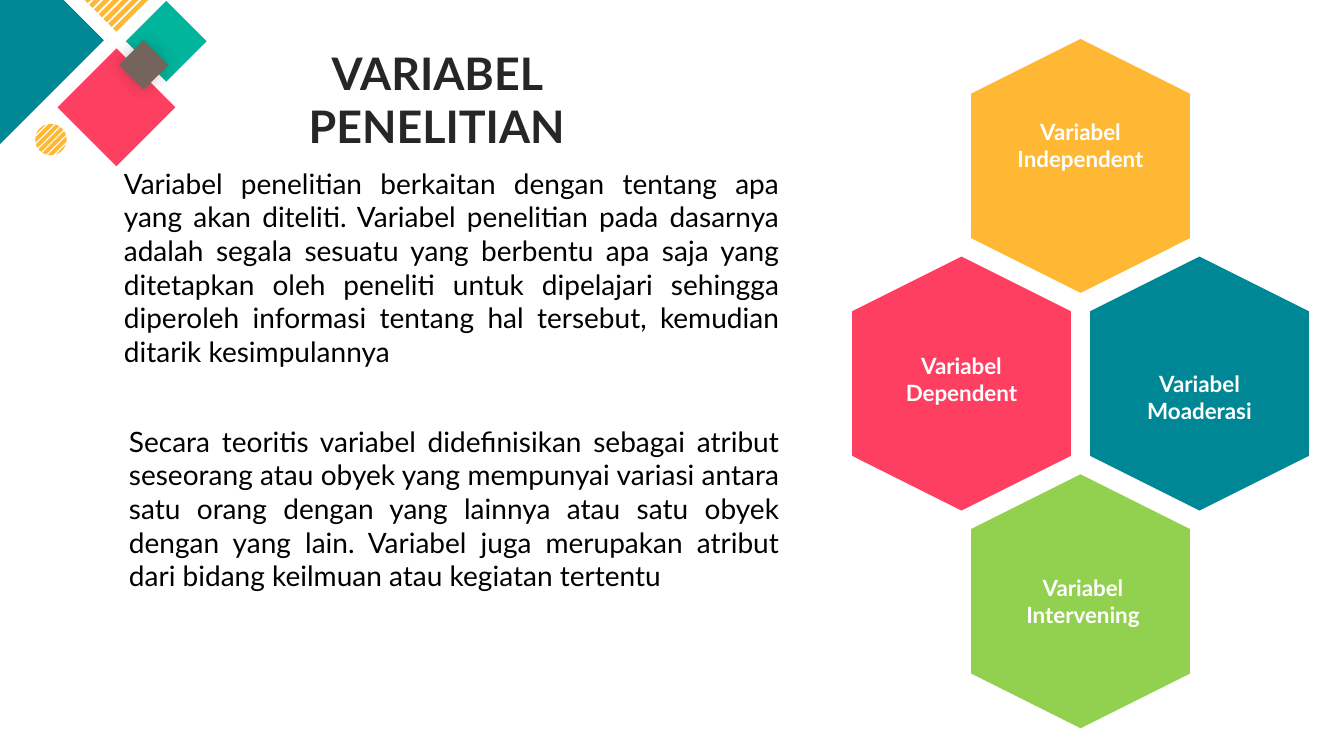
import math

import lxml.etree
import pptx
import pptx.dml.color
import pptx.enum.shapes
import pptx.enum.text
import pptx.oxml.ns
import pptx.util

Pt = pptx.util.Pt
SHAPE = pptx.enum.shapes.MSO_SHAPE
ALIGN = pptx.enum.text.PP_ALIGN
ANCHOR = pptx.enum.text.MSO_ANCHOR

FONT = "Lato"
TEAL, PINK, YELLOW = "008795", "FE3F61", "FEB834"
MINT, BROWN, GREEN = "01B59C", "75645C", "92D050"
BLACK, CHARCOAL, WHITE = "000000", "262626", "FFFFFF"

TITLE = "VARIABEL PENELITIAN"
DEFINITION = (
    "Variabel penelitian berkaitan dengan tentang apa yang akan diteliti. "
    "Variabel penelitian pada dasarnya adalah segala sesuatu yang berbentu apa saja "
    "yang ditetapkan oleh peneliti untuk dipelajari sehingga diperoleh informasi "
    "tentang hal tersebut, kemudian ditarik kesimpulannya"
)
THEORY = (
    "Secara teoritis variabel didefinisikan sebagai atribut seseorang atau obyek "
    "yang mempunyai variasi antara satu orang dengan yang lainnya atau satu obyek "
    "dengan yang lain. Variabel juga merupakan atribut dari bidang keilmuan atau "
    "kegiatan tertentu"
)
# Column and row from the cluster centre, fill, text, label shift right and down
HEXAGONS = [
    (0, -1, YELLOW, "Variabel Independent", 0, -14.8),
    (-1, 0, PINK, "Variabel Dependent", 0, -3.2),
    (1, 0, TEAL, "Variabel Moaderasi", 0, 9.7),
    (0, 1, GREEN, "Variabel Intervening", 1.8, 0),
]


def colour(hex_string):
    return pptx.dml.color.RGBColor.from_string(hex_string)


def paint(shape, fill):
    shape.shadow.inherit = False
    shape.fill.solid()
    shape.fill.fore_color.rgb = colour(fill)
    shape.line.fill.background()


def add_centred(page, kind, x, y, width, height, fill, rotation=0):
    shape = page.shapes.add_shape(
        kind, Pt(x - width / 2), Pt(y - height / 2), Pt(width), Pt(height))
    shape.rotation = rotation
    paint(shape, fill)
    return shape


def add_glow(shape, blur, opacity):
    effects = shape._element.spPr.find(pptx.oxml.ns.qn("a:effectLst"))
    shadow = lxml.etree.SubElement(
        effects, pptx.oxml.ns.qn("a:outerShdw"), blurRad=str(Pt(blur)), dist="0", dir="0")
    black = lxml.etree.SubElement(shadow, pptx.oxml.ns.qn("a:srgbClr"), val=BLACK)
    lxml.etree.SubElement(black, pptx.oxml.ns.qn("a:alpha"), val=str(opacity * 1000))


def write(frame, text, size, ink, align, bold=False, anchor=ANCHOR.TOP):
    frame.word_wrap = True
    frame.auto_size = pptx.enum.text.MSO_AUTO_SIZE.NONE
    frame.vertical_anchor = anchor
    para = frame.paragraphs[0]
    para.alignment = align
    para.line_spacing = 1.0
    span = para.add_run()
    span.text = text
    span.font.name = FONT
    span.font.size = Pt(size)
    span.font.bold = bold
    span.font.color.rgb = colour(ink)


def add_text(page, box, *args, **options):
    text_box = page.shapes.add_textbox(*map(Pt, box))
    write(text_box.text_frame, *args, **options)


def add_striped_disc(page, x, y, radius, pitch, thickness, fill):
    """Diagonal bands clipped to a circle, as one outline."""
    def rim(angle):
        turned = angle + math.pi / 4
        return Pt(x + radius * math.cos(turned)), Pt(y + radius * math.sin(turned))

    builder = None
    for band in range(-3, 4):
        near, far = (
            math.acos(max(-1, min(1, (band * pitch + side * thickness / 2) / radius)))
            for side in (-1, 1))
        arc = [near + (far - near) * step / 6 for step in range(7)]
        points = [rim(a) for a in arc] + [rim(-a) for a in reversed(arc)]
        if builder is None:
            builder = page.shapes.build_freeform(*points[0], scale=1.0)
        else:
            builder.move_to(*points[0])
        builder.add_line_segments(points[1:], close=True)
    paint(builder.convert_to_shape(), fill)


def add_corner_ornament(page, box):
    left, top = box[:2]

    def diamond(x, y, size, fill):
        return add_centred(page, SHAPE.DIAMOND, left + x, top + y, size, size, fill)

    diamond(-0.7, 28.8, 149.8, TEAL)
    diamond(83.2, 76.7, 84.2, PINK)
    # Slanted stripes at the top edge
    for index in range(7):
        shift = index * 3.4
        add_centred(page, SHAPE.RECTANGLE, left + 73 + shift, top - 10.4 + shift,
                    3.4, 32.4, YELLOW, 45)
    diamond(118.8, 29.5, 57.6, MINT)
    add_glow(diamond(102.6, 46.4, 35.3, BROWN), 13, 21)
    add_striped_disc(page, left + 36.4, top + 99.7, 11.2, 3.8, 2.8, YELLOW)


def add_title(page, box):
    title = page.shapes.title
    title.left, title.top, title.width, title.height = map(Pt, box)
    write(title.text_frame, TITLE, 32, CHARCOAL, ALIGN.CENTER, bold=True)


def add_body(page, box):
    left, top, width, height = box
    for text, indent, drop, tall in ((DEFINITION, 0, 0, 177), (THEORY, 3.6, 184.3, 152.7)):
        add_text(page, (left + indent, top + drop, width - indent, tall),
                 text, 20, BLACK, ALIGN.JUSTIFY)


def add_hexagon_cluster(page, box):
    left, top, width, height = box
    across, tall = 156.2, 181.4
    column_step, row_step = (width - across) / 2, (height - tall) / 2
    label_width, label_height = 126, 46
    for column, row, fill, text, right, down in HEXAGONS:
        x = left + width / 2 + column * column_step
        y = top + height / 2 + row * row_step
        # The preset points sideways, so it is turned upright
        add_centred(page, SHAPE.HEXAGON, x, y, tall, across, fill, 90)
        add_text(page, (x + right - label_width / 2, y + down - label_height / 2,
                        label_width, label_height),
                 text, 16, WHITE, ALIGN.CENTER, bold=True, anchor=ANCHOR.MIDDLE)


def main():
    deck = pptx.Presentation()
    deck.slide_width, deck.slide_height = Pt(960), Pt(540)
    page = deck.slides.add_slide(deck.slide_layouts.get_by_name("Title Only"))
    add_corner_ornament(page, (0, 0, 148, 119))
    add_title(page, (192, 28.8, 240, 84))
    add_body(page, (81.4, 115.2, 482.4, 337))
    add_hexagon_cluster(page, (608.7, 27.8, 326.2, 492.4))
    deck.save("out.pptx")


if __name__ == "__main__":
    main()
